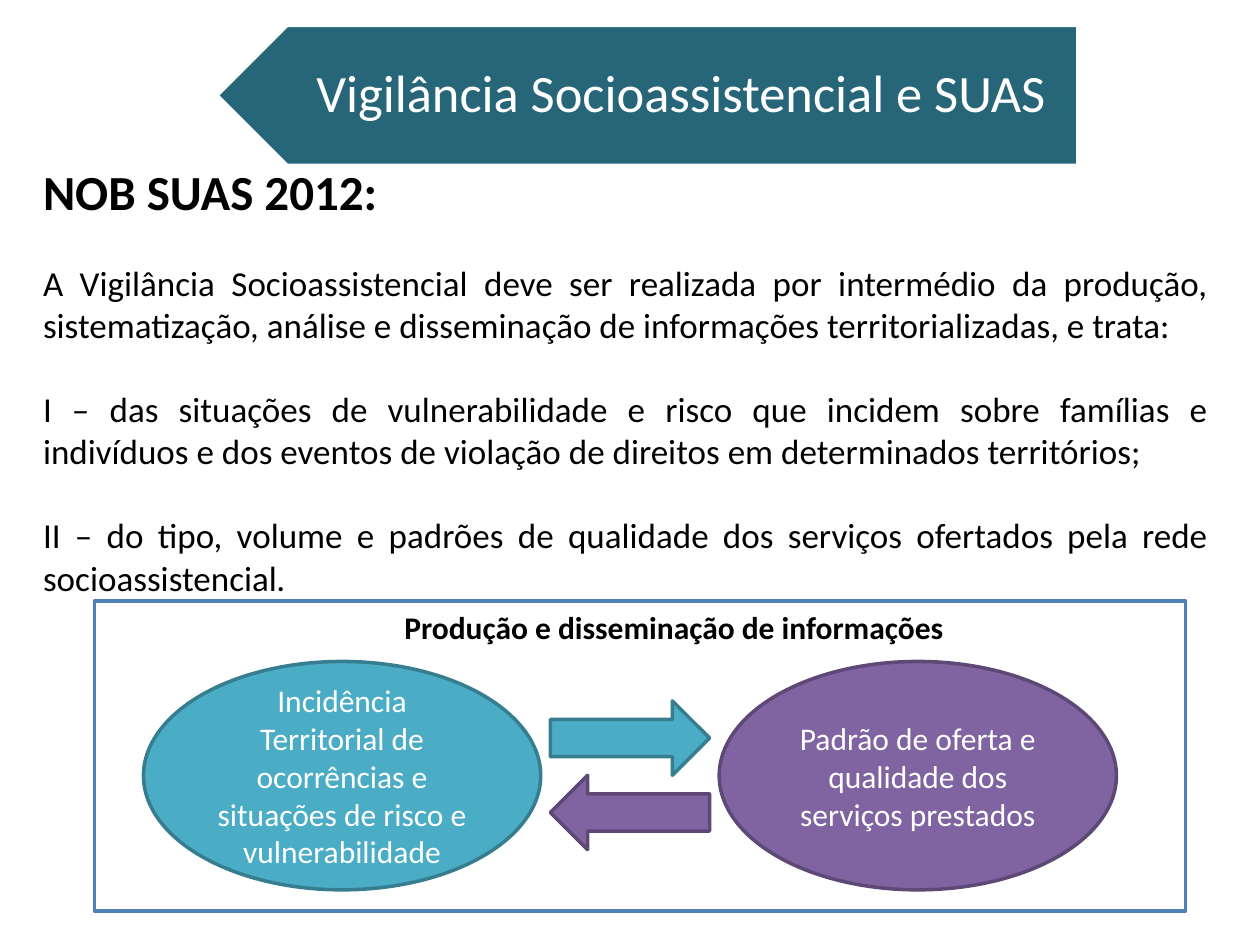
from pptx import Presentation
from pptx.dml.color import RGBColor
from pptx.enum import shapes, text
from pptx.util import Pt

FONT = "Calibri"
WHITE = RGBColor(0xFF, 0xFF, 0xFF)
BLACK = RGBColor(0x00, 0x00, 0x00)
PETROL = RGBColor(0x26, 0x66, 0x78)
FRAME_BLUE = RGBColor(0x4F, 0x81, 0xBD)
TEAL = RGBColor(0x4B, 0xAC, 0xC6)
TEAL_EDGE = RGBColor(0x36, 0x7D, 0x90)
PURPLE = RGBColor(0x80, 0x64, 0xA2)
PURPLE_EDGE = RGBColor(0x5D, 0x48, 0x76)

HEADING = "NOB SUAS 2012:"
BODY = [
    "A Vigilância Socioassistencial deve ser realizada por intermédio da produção, "
    "sistematização, análise e disseminação de informações territorializadas, e trata:",
    "I – das situações de vulnerabilidade e risco que incidem sobre famílias e "
    "indivíduos e dos eventos de violação de direitos em determinados territórios;",
    "II – do tipo, volume e padrões de qualidade dos serviços ofertados pela rede "
    "socioassistencial",
]
RISK = "Incidência Territorial de ocorrências e situações de risco e vulnerabilidade"
SUPPLY = "Padrão de oferta e qualidade dos serviços prestados"


def add_figure(page, kind, box, fill, edge, rotation=0):
    figure = page.shapes.add_shape(kind, *map(Pt, box))
    figure.shadow.inherit = False
    figure.rotation = rotation
    figure.fill.solid()
    figure.fill.fore_color.rgb = fill
    figure.line.color.rgb = edge
    figure.line.width = Pt(2)
    return figure


def add_label(page, box):
    frame = page.shapes.add_textbox(*map(Pt, box)).text_frame
    frame.word_wrap = True
    return frame


def style(para, size, color, align, bold=False):
    para.alignment = align
    for span in para.runs:
        span.font.name = FONT
        span.font.size = Pt(size)
        span.font.bold = bold
        span.font.color.rgb = color


def add_banner(page, left, top, width, height):
    add_figure(page, shapes.MSO_SHAPE.PENTAGON, (left, top, width, height),
               PETROL, WHITE, rotation=180)
    indent = 20
    frame = add_label(page, (left + indent, top, width - indent, height))
    frame.vertical_anchor = text.MSO_ANCHOR.MIDDLE
    frame.margin_left, frame.margin_right = Pt(35), Pt(16.5)
    frame.text = "Vigilância Socioassistencial e SUAS"
    style(frame.paragraphs[0], 30, WHITE, text.PP_ALIGN.CENTER)
    frame.paragraphs[0].line_spacing = 0.9


def add_body(page, left, top, width, height):
    frame = add_label(page, (left, top, width, height))
    frame.text = HEADING
    style(frame.paragraphs[0], 28, BLACK, text.PP_ALIGN.JUSTIFY, bold=True)
    for item in BODY:
        para = frame.add_paragraph()
        para.text = item
        para.space_before = Pt(24)
        style(para, 20, BLACK, text.PP_ALIGN.JUSTIFY)
    full_stop = para.add_run()
    full_stop.text = "."
    style(para, 20, BLACK, text.PP_ALIGN.JUSTIFY)
    full_stop.font.italic = True


def add_frame(page, left, top, width, height):
    add_figure(page, shapes.MSO_SHAPE.RECTANGLE, (left, top, width, height),
               WHITE, FRAME_BLUE)


def add_exchange(page, left, top):
    """Two ellipses joined by a pair of opposite arrows, under a caption."""
    oval_width, oval_height = 227, 130.5
    arrow_width, arrow_height = 91, 42.5
    oval_step, arrow_left, arrow_top = 329, 232.5, 22.5
    sides = [(RISK, TEAL, TEAL_EDGE, 0), (SUPPLY, PURPLE, PURPLE_EDGE, 180)]
    for i, (label, fill, edge, rotation) in enumerate(sides):
        oval = add_figure(page, shapes.MSO_SHAPE.OVAL,
                          (left + i * oval_step, top, oval_width, oval_height),
                          fill, edge)
        oval.text_frame.text = label
        oval.text_frame.word_wrap = True
        oval.text_frame.vertical_anchor = text.MSO_ANCHOR.MIDDLE
        style(oval.text_frame.paragraphs[0], 18, WHITE, text.PP_ALIGN.CENTER)
        add_figure(page, shapes.MSO_SHAPE.RIGHT_ARROW,
                   (left + arrow_left, top + arrow_top + i * arrow_height,
                    arrow_width, arrow_height), fill, edge, rotation)
    caption = add_label(page, (left + 142, top - 34, 345.5, 29))
    caption.text = "Produção e disseminação de informações"
    style(caption.paragraphs[0], 18, BLACK, text.PP_ALIGN.LEFT, bold=True)


def main():
    deck = Presentation()
    deck.slide_width, deck.slide_height = Pt(720), Pt(540)
    page = deck.slides.add_slide(deck.slide_layouts[6])
    add_frame(page, 54, 343.5, 623.5, 177)
    add_banner(page, 124, 14.5, 492, 80)
    add_body(page, 17.5, 88.5, 680, 307.5)
    add_exchange(page, 82, 378)
    deck.save("out.pptx")


if __name__ == "__main__":
    main()
